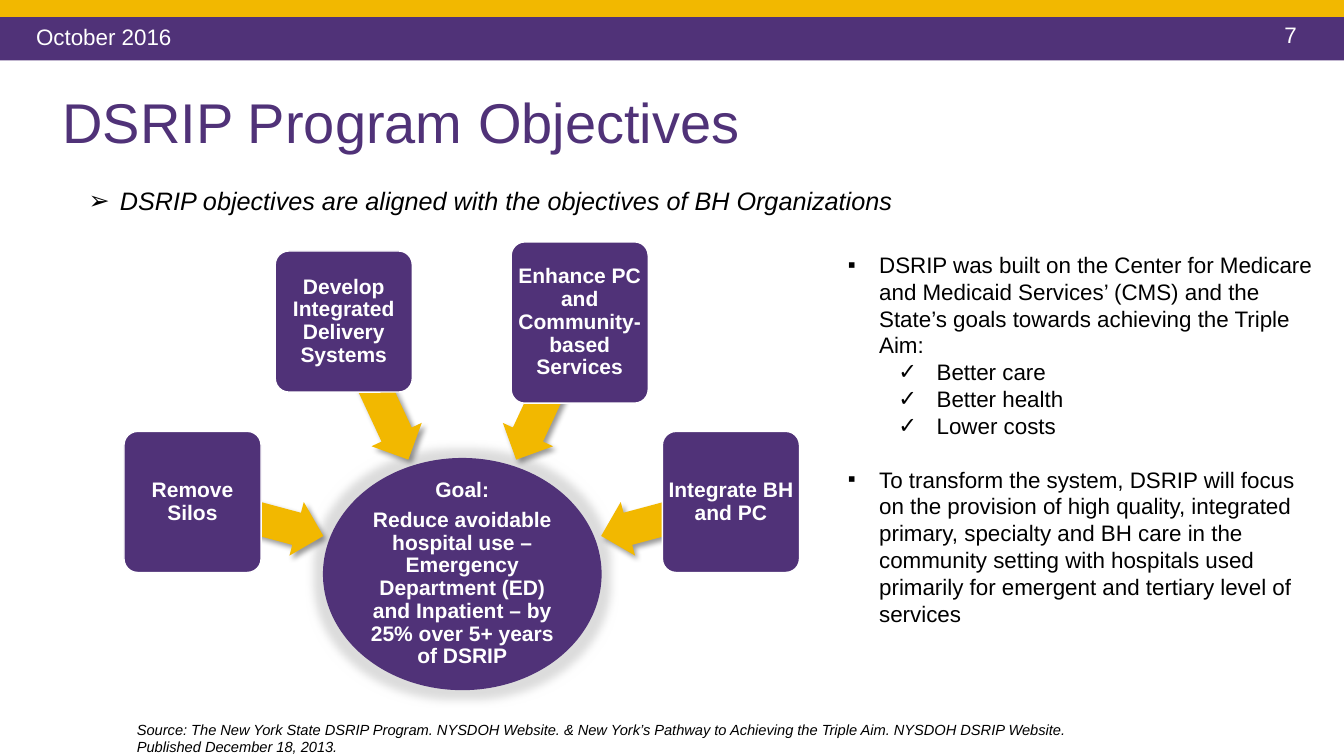
from dataclasses import dataclass

from lxml.etree import SubElement
from pptx import Presentation
from pptx.dml.color import RGBColor
from pptx.enum.shapes import MSO_SHAPE as Preset
from pptx.enum.text import MSO_ANCHOR as Anchor, MSO_AUTO_SIZE as AutoSize, PP_ALIGN as Align
from pptx.oxml.ns import qn
from pptx.util import Pt

PX = 9144


@dataclass(frozen=True)
class Theme:
    """Colours and type sizes of the slide."""
    purple: str = "503278"
    gold: str = "F2B800"
    white: str = "FFFFFF"
    black: str = "000000"
    halo: str = "DCDCDC"
    face: str = "Arial"
    title: float = 40
    lead: float = 18
    body: float = 16
    node: float = 15
    source: float = 10.5


THEME = Theme()
NODES = [
    ("Remove Silos", -267, 428, 140, -202, 514, 133, 195),
    ("Develop Integrated Delivery Systems", -117, 249, 140, -85, 388, 149, 245),
    ("Enhance PC and Community-based Services", 117, 240, 160, 85, 388, 149, 295),
    ("Integrate BH and PC", 267, 428, 140, 202, 514, 133, 345),
]
GOAL = [
    "Goal:",
    "Reduce avoidable hospital use – Emergency Department (ED) and Inpatient – by "
    "25% over 5+ years of DSRIP",
]
LEAD = [("DSRIP objectives are aligned with the objectives of BH Organizations", 0, "➢", 0)]
AIMS = [
    ("DSRIP was built on the Center for Medicare and Medicaid Services’ (CMS) and the "
     "State’s goals towards achieving the Triple Aim:", 0, "▪", 0),
    ("Better care", 1, "✓", 0),
    ("Better health", 1, "✓", 0),
    ("Lower costs", 1, "✓", 0),
    ("To transform the system, DSRIP will focus on the provision of high quality, "
     "integrated primary, specialty and BH care in the community setting with hospitals "
     "used primarily for emergent and tertiary level of services", 0, "▪", 19),
]
SOURCE = (
    "Source: The New York State DSRIP Program. NYSDOH Website. & New York’s Pathway to "
    "Achieving the Triple Aim. NYSDOH DSRIP Website. Published December 18, 2013."
)


def emu(box):
    """Turn a box in px into EMU."""
    return [length * PX for length in box]


def write(paragraph, wording, size, color, bold=False, italic=False):
    """Add one formatted run to a paragraph."""
    run = paragraph.add_run()
    run.text = wording
    run.font.name, run.font.size = THEME.face, Pt(size)
    run.font.bold, run.font.italic = bold, italic
    run.font.color.rgb = RGBColor.from_string(color)


def add_solid(slide, preset, box, fill, outline=None):
    """Add a filled preset shape without a default shadow."""
    solid = slide.shapes.add_shape(preset, *emu(box))
    solid.shadow.inherit = False
    solid.fill.solid()
    solid.fill.fore_color.rgb = RGBColor.from_string(fill)
    if outline:
        solid.line.color.rgb = RGBColor.from_string(outline)
        solid.line.width = Pt(1)
    else:
        solid.line.fill.background()
    return solid


def add_effect(solid, kind, color, alpha=100, **settings):
    """Put a glow or shadow on a shape."""
    effects = solid.element.spPr.find(qn("a:effectLst"))
    effect = SubElement(effects, qn(f"a:{kind}"), {k: str(v) for k, v in settings.items()})
    tint = SubElement(effect, qn("a:srgbClr"), val=color)
    SubElement(tint, qn("a:alpha"), val=str(alpha * 1000))


def fill_node(solid, wordings):
    """Centre bold white paragraphs inside a shape."""
    frame = solid.text_frame
    frame.word_wrap = True
    frame.vertical_anchor = Anchor.MIDDLE
    frame.margin_left = frame.margin_right = frame.margin_top = frame.margin_bottom = 0
    for index, wording in enumerate(wordings):
        paragraph = frame.add_paragraph() if index else frame.paragraphs[0]
        paragraph.alignment = Align.CENTER
        paragraph.line_spacing = 0.9
        if index < len(wordings) - 1:
            paragraph.space_after = Pt(5)
        write(paragraph, wording, THEME.node, THEME.white, bold=True)


def add_label(slide, box, wording, size, color, anchor=Anchor.TOP, italic=False):
    """Add a wrapped text box with one paragraph."""
    frame = slide.shapes.add_textbox(*emu(box)).text_frame
    frame.word_wrap = True
    frame.vertical_anchor = anchor
    write(frame.paragraphs[0], wording, size, color, italic=italic)


def place(holder, box):
    """Move a placeholder and return its text frame."""
    holder.left, holder.top, holder.width, holder.height = emu(box)
    frame = holder.text_frame
    frame.word_wrap = True
    frame.auto_size = AutoSize.NONE
    return frame


def fill_list(holder, box, items, size, italic=False):
    """Fill a body placeholder with bulleted items."""
    frame = place(holder, box)
    for index, (wording, level, bullet, gap) in enumerate(items):
        paragraph = frame.add_paragraph() if index else frame.paragraphs[0]
        paragraph.level = level
        indent, hang = ((31, 31), (88, 38))[level]
        properties = paragraph._p.get_or_add_pPr()
        properties.set("marL", str(indent * PX))
        properties.set("indent", str(-hang * PX))
        SubElement(properties, qn("a:buFont"), typeface=THEME.face)
        SubElement(properties, qn("a:buChar"), char=bullet)
        paragraph.space_before = Pt(gap)
        write(paragraph, wording, size, THEME.black, italic=italic)


def add_header(slide, box):
    """Draw the gold and purple bands with date and page number."""
    left, top, width, height = box
    stripe = 17
    add_solid(slide, Preset.RECTANGLE, (left, top, width, stripe), THEME.gold)
    add_solid(slide, Preset.RECTANGLE, (left, top + stripe, width, height - stripe), THEME.purple)
    add_label(slide, (left + 26, top + 16, 600, 40), "October 2016",
              THEME.body, THEME.white, Anchor.MIDDLE)
    add_label(slide, (left + width - 69, top + 16, 48, 37), "7", THEME.body, THEME.white)


def add_title(slide, box):
    """Fill the title placeholder."""
    frame = place(slide.shapes.title, box)
    frame.vertical_anchor = Anchor.MIDDLE
    heading = frame.paragraphs[0]
    heading.alignment = Align.LEFT
    heading.line_spacing = 0.9
    write(heading, "DSRIP Program Objectives", THEME.title, THEME.purple)


def add_objectives(slide, box):
    """Draw the goal and the four objectives pointing to it."""
    left, top, width, height = box
    middle = left + width // 2
    hub_width, hub_height = 275, 229
    hub = add_solid(slide, Preset.OVAL,
                    (middle - hub_width // 2, top + height - hub_height, hub_width, hub_height),
                    THEME.purple, THEME.purple)
    add_effect(hub, "glow", THEME.halo, rad=18 * PX)
    fill_node(hub, GOAL)
    node_width, arrow_height = 136, 55
    for label, offset, node_top, node_height, reach, arrow_y, length, angle in NODES:
        arrow = add_solid(slide, Preset.LEFT_ARROW,
                          (middle + reach - length // 2, top - 240 + arrow_y - arrow_height // 2,
                           length, arrow_height), THEME.gold)
        arrow.adjustments[0], arrow.adjustments[1] = 0.6, 0.5
        arrow.rotation = angle
        add_effect(arrow, "outerShdw", THEME.black, 40, blurRad=Pt(4), dist=Pt(3),
                   dir=45 * 60000, algn="ctr", rotWithShape=0)
        node = add_solid(slide, Preset.ROUNDED_RECTANGLE,
                         (middle + offset - node_width // 2, top - 240 + node_top,
                          node_width, node_height), THEME.purple, THEME.white)
        node.adjustments[0] = 0.1
        fill_node(node, [label])


def main():
    """Build and save the slide."""
    deck = Presentation()
    deck.slide_width, deck.slide_height = 1333 * PX, 750 * PX
    slide = deck.slides.add_slide(deck.slide_layouts[3])
    add_header(slide, (0, 0, 1333, 60))
    add_title(slide, (52, 72, 1249, 104))
    fill_list(slide.placeholders[1], (78, 179, 1173, 40), LEAD, THEME.lead, italic=True)
    add_objectives(slide, (124, 240, 669, 444))
    fill_list(slide.placeholders[2], (831, 244, 490, 414), AIMS, THEME.body)
    add_label(slide, (126, 710, 966, 40), SOURCE, THEME.source, THEME.black, italic=True)
    deck.save("out.pptx")


if __name__ == "__main__":
    main()
